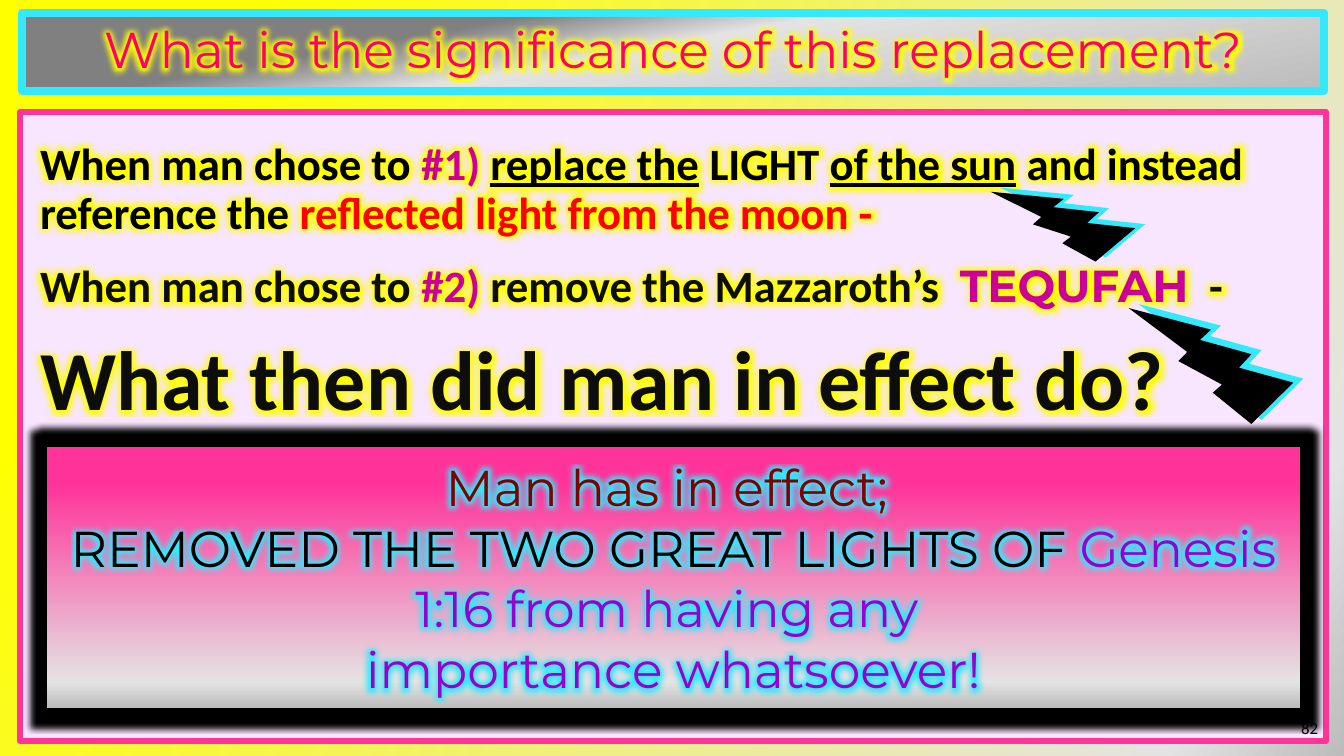
import pptx
import pptx.util
import pptx.dml.color
import pptx.enum.shapes
import pptx.enum.text
import pptx.oxml
import pptx.oxml.ns
import lxml.etree

RGB = pptx.dml.color.RGBColor
YELLOW = RGB(0xFF, 0xFF, 0x00)
LIGHT_GREY = RGB(0xE4, 0xE3, 0xE3)
SILVER = RGB(0xBD, 0xBC, 0xBC)
GREY = RGB(0x80, 0x80, 0x80)
CYAN = RGB(0x34, 0xE9, 0xFC)
ROSE = RGB(0xFF, 0x00, 0x66)
LILAC = RGB(0xF8, 0xE5, 0xFF)
PINK = RGB(0xFF, 0x33, 0x99)
BLACK = RGB(0x00, 0x00, 0x00)
INK = RGB(0x0D, 0x0D, 0x0D)
MAGENTA = RGB(0xCC, 0x00, 0x99)
RED = RGB(0xFF, 0x00, 0x00)
MAROON = RGB(0x80, 0x00, 0x00)
PURPLE = RGB(0x99, 0x00, 0xCC)

EMU_PER_PX = 914400 / 100.8
ALIGN = pptx.enum.text.PP_ALIGN
ANCHOR = pptx.enum.text.MSO_ANCHOR
SHAPES = pptx.enum.shapes.MSO_SHAPE
NS = pptx.oxml.ns.nsdecls("a")
qn = pptx.oxml.ns.qn


def px(length):
    return pptx.util.Emu(round(length * EMU_PER_PX))


def parse(xml):
    return pptx.oxml.parse_xml(xml)


def place(shape, left, top, width, height):
    shape.left, shape.top = px(left), px(top)
    shape.width, shape.height = px(width), px(height)


def set_gradient(fill, owner, stops, angle):
    fill.gradient()
    fill.gradient_angle = 360 - angle
    stop_list = owner.find(".//" + qn("a:gsLst"))
    for stop in list(stop_list):
        stop_list.remove(stop)
    for position, color in stops:
        stop_list.append(parse(
            f'<a:gs {NS} pos="{position * 1000}"><a:srgbClr val="{color}"/></a:gs>'))


def set_line(shape, color, width):
    shape.line.color.rgb = color
    shape.line.width = pptx.util.Pt(width)


def glow(color, radius):
    return parse(
        f'<a:effectLst {NS}><a:glow rad="{radius * 12700}">'
        f'<a:srgbClr val="{color}"/></a:glow></a:effectLst>')


def add_text(para, text, *, size, color, font="Calibri", bold=False,
             underline=False, halo=None):
    for number, part in enumerate(text.split("\n")):
        if number:
            para.add_line_break()
        if not part:
            continue
        span = para.add_run()
        span.text = part
        span.font.size = pptx.util.Pt(size)
        span.font.name = font
        span.font.bold = bold
        span.font.underline = underline
        span.font.color.rgb = color
        if halo is not None:
            fill = span.font._element.find(qn("a:solidFill"))
            fill.addnext(glow(halo, 8))


def setup_frame(shape, anchor):
    frame = shape.text_frame
    frame.word_wrap = True
    frame.auto_size = pptx.enum.text.MSO_AUTO_SIZE.NONE
    frame.vertical_anchor = anchor
    return frame


def fill_title(title):
    place(title, 22, 13, 1302, 78)
    set_gradient(title.fill, title._element,
                 [(30, GREY), (47, LIGHT_GREY), (100, SILVER)], 80)
    set_line(title, CYAN, 6)
    para = setup_frame(title, ANCHOR.MIDDLE).paragraphs[0]
    para.alignment = ALIGN.CENTER
    para.line_spacing = 0.9
    add_text(para, "What is the significance of this replacement?",
             size=36, color=ROSE, font="Montserrat", halo=YELLOW)


def fill_body(body):
    place(body, 20, 112, 1306, 629)
    body.fill.solid()
    body.fill.fore_color.rgb = LILAC
    set_line(body, PINK, 4.5)
    frame = setup_frame(body, ANCHOR.TOP)
    frame.margin_left, frame.margin_top = px(20), px(30)
    frame.margin_right, frame.margin_bottom = px(10), px(5)
    lines = [
        (32, [("When man chose to ", BLACK, {}),
              ("#1) ", MAGENTA, {}),
              ("replace the", BLACK, {"underline": True}),
              (" LIGHT ", BLACK, {}),
              ("of the sun", BLACK, {"underline": True}),
              (" and instead reference the ", BLACK, {}),
              ("reflected light from the moon -", RED, {})]),
        (32, [("When man chose to ", INK, {}),
              ("#2) ", MAGENTA, {}),
              ("remove the Mazzaroth’s  ", INK, {}),
              ("TEQUFAH", MAGENTA, {"font": "Montserrat"}),
              ("  -", INK, {})]),
        (60, [("What then did man in effect do?", INK, {})]),
    ]
    for number, (size, spans) in enumerate(lines):
        para = frame.add_paragraph() if number else frame.paragraphs[0]
        para.line_spacing = 0.9
        para.space_before = pptx.util.Pt(0)
        para.space_after = pptx.util.Pt(18)
        properties = para._p.get_or_add_pPr()
        properties.set("marL", "0")
        properties.set("indent", "0")
        lxml.etree.SubElement(properties, qn("a:buNone"))
        for text, color, style in spans:
            add_text(para, text, size=size, color=color, bold=True,
                     halo=YELLOW, **style)


def add_page_number(page):
    box = page.shapes.add_textbox(px(1026), px(708), px(302), px(40))
    para = setup_frame(box, ANCHOR.MIDDLE).paragraphs[0]
    para.alignment = ALIGN.RIGHT
    add_text(para, "82", size=12, color=BLACK)


def add_bolt(page, left, top, width, height, rotation):
    for color, right_shift, up_shift in [(CYAN, 10, 4), (BLACK, 0, 0)]:
        bolt = page.shapes.add_shape(
            SHAPES.LIGHTNING_BOLT, px(left + right_shift), px(top - up_shift),
            px(width), px(height))
        bolt.shadow.inherit = False
        bolt.rotation = rotation
        bolt.fill.solid()
        bolt.fill.fore_color.rgb = color
        bolt.line.fill.background()


def add_answer(page):
    box = page.shapes.add_shape(SHAPES.RECTANGLE, px(47), px(447), px(1253), px(261))
    set_gradient(box.fill, box._element,
                 [(14, PINK), (90, LIGHT_GREY), (100, SILVER)], 90)
    box.line.fill.background()
    box._element.spPr.append(glow(BLACK, 9))
    para = setup_frame(box, ANCHOR.MIDDLE).paragraphs[0]
    para.alignment = ALIGN.CENTER
    for text, color in [
        ("Man has in effect; \n", MAROON),
        ("REMOVED THE TWO GREAT LIGHTS OF ", BLACK),
        ("Genesis 1:16 from having any \nimportance whatsoever!", PURPLE),
    ]:
        add_text(para, text, size=36, color=color, font="Montserrat", halo=CYAN)


def main():
    deck = pptx.Presentation()
    deck.slide_width, deck.slide_height = px(1344), px(756)
    page = deck.slides.add_slide(deck.slide_layouts[1])
    set_gradient(page.background.fill, page._element,
                 [(14, YELLOW), (90, LIGHT_GREY), (100, SILVER)], 30)
    fill_title(page.shapes.title)
    fill_body(page.placeholders[1])
    add_bolt(page, 1004, 168, 124, 101, 160.4)
    add_bolt(page, 1148, 284, 134, 148, 162.2)
    add_answer(page)
    add_page_number(page)
    deck.save("out.pptx")


if __name__ == "__main__":
    main()
